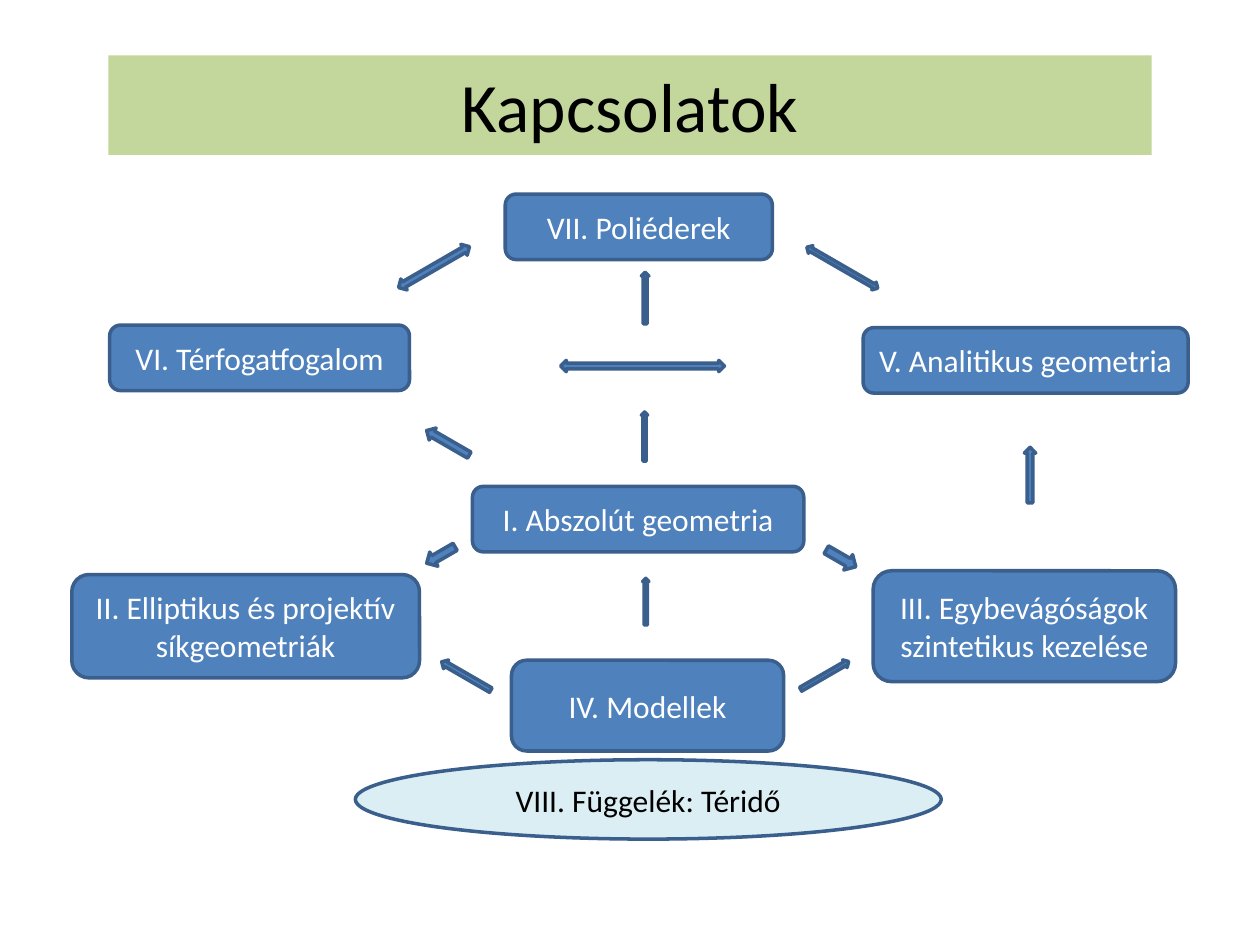
"""Build a slide showing how the chapters of a geometry course connect."""
import pptx
import pptx.dml.color
import pptx.enum.shapes
import pptx.enum.text
import pptx.util

Inches = pptx.util.Inches
SHAPES = pptx.enum.shapes.MSO_SHAPE

COLOURS = {
    "title": "C3D69B",
    "chapter": "4F81BD",
    "outline": "3A5F8C",
    "appendix": "DBEEF4",
    "dark": "000000",
    "light": "FFFFFF",
}

CHAPTERS = [
    ("I. Abszolút geometria", (3.75, 3.86, 2.63, 0.52)),
    ("II. Elliptikus és projektív síkgeometriák", (0.57, 4.56, 2.76, 0.82)),
    ("III. Egybevágóságok szintetikus kezelése", (6.93, 4.53, 2.4, 0.88)),
    ("IV. Modellek", (4.06, 5.24, 2.16, 0.72)),
    ("V. Analitikus geometria", (6.85, 2.6, 2.58, 0.52)),
    ("VI. Térfogatfogalom", (0.87, 2.58, 2.38, 0.52)),
    ("VII. Poliéderek", (4.01, 1.54, 2.12, 0.52)),
]

ARROWS = [
    (SHAPES.DOWN_ARROW, (5.1, 4.59, 0.05, 0.37), 180),
    (SHAPES.DOWN_ARROW, (5.09, 3.27, 0.05, 0.39), 180),
    (SHAPES.DOWN_ARROW, (5.09, 2.16, 0.06, 0.41), 180),
    (SHAPES.DOWN_ARROW, (8.13, 3.55, 0.09, 0.44), 180),
    (SHAPES.DOWN_ARROW, (3.66, 5.14, 0.08, 0.45), 120),
    (SHAPES.DOWN_ARROW, (6.51, 5.14, 0.07, 0.44), 240),
    (SHAPES.LEFT_RIGHT_ARROW, (6.36, 2.09, 0.65, 0.07), 30),
    (SHAPES.LEFT_RIGHT_ARROW, (4.45, 2.86, 1.3, 0.09), 0),
    (SHAPES.LEFT_RIGHT_ARROW, (3.12, 2.07, 0.65, 0.1), 330),
    (SHAPES.LEFT_ARROW, (3.36, 3.46, 0.39, 0.11), 30),
    (SHAPES.LEFT_ARROW, (6.54, 4.36, 0.27, 0.14), 210),
    (SHAPES.LEFT_ARROW, (3.37, 4.34, 0.26, 0.13), 330),
]


def colour(name):
    """Return the named colour."""
    return pptx.dml.color.RGBColor.from_string(COLOURS[name])


def add_figure(slide, kind, box, fill, outlined=True):
    """Add a filled preset shape, outlined unless told otherwise."""
    shape = slide.shapes.add_shape(kind, *(Inches(length) for length in box))
    shape.shadow.inherit = False
    shape.fill.solid()
    shape.fill.fore_color.rgb = colour(fill)
    if outlined:
        shape.line.color.rgb = colour("outline")
        shape.line.width = pptx.util.Pt(2)
    else:
        shape.line.fill.background()
    return shape


def write_text(shape, text, text_colour, size=18):
    """Write one centred line of text that wraps inside the shape."""
    frame = shape.text_frame
    frame.word_wrap = True
    frame.margin_left = frame.margin_right = Inches(0.05)
    frame.vertical_anchor = pptx.enum.text.MSO_ANCHOR.MIDDLE
    paragraph = frame.paragraphs[0]
    paragraph.alignment = pptx.enum.text.PP_ALIGN.CENTER
    run = paragraph.add_run()
    run.text = text
    run.font.name = "Calibri"
    run.font.size = pptx.util.Pt(size)
    run.font.color.rgb = colour(text_colour)


def add_title(slide):
    """Add the title band."""
    band = add_figure(slide, SHAPES.RECTANGLE, (0.86, 0.44, 8.28, 0.79), "title", False)
    write_text(band, "Kapcsolatok", "dark", 39.6)


def add_chapter(slide, text, box):
    """Add a rounded chapter box."""
    shape = add_figure(slide, SHAPES.ROUNDED_RECTANGLE, box, "chapter")
    write_text(shape, text, "light")


def add_arrow(slide, kind, box, rotation):
    """Add a rotated block arrow."""
    add_figure(slide, kind, box, "chapter").rotation = rotation


def add_appendix(slide):
    """Add the appendix ellipse."""
    ellipse = add_figure(slide, SHAPES.OVAL, (2.82, 6.03, 4.65, 0.63), "appendix")
    write_text(ellipse, "VIII. Függelék: Téridő", "dark")


def main():
    """Build and save the presentation."""
    presentation = pptx.Presentation()
    presentation.slide_width = Inches(10)
    presentation.slide_height = Inches(7.5)
    slide = presentation.slides.add_slide(presentation.slide_layouts[6])
    add_title(slide)
    for text, box in CHAPTERS:
        add_chapter(slide, text, box)
    for kind, box, rotation in ARROWS:
        add_arrow(slide, kind, box, rotation)
    add_appendix(slide)
    presentation.save("out.pptx")


if __name__ == "__main__":
    main()
